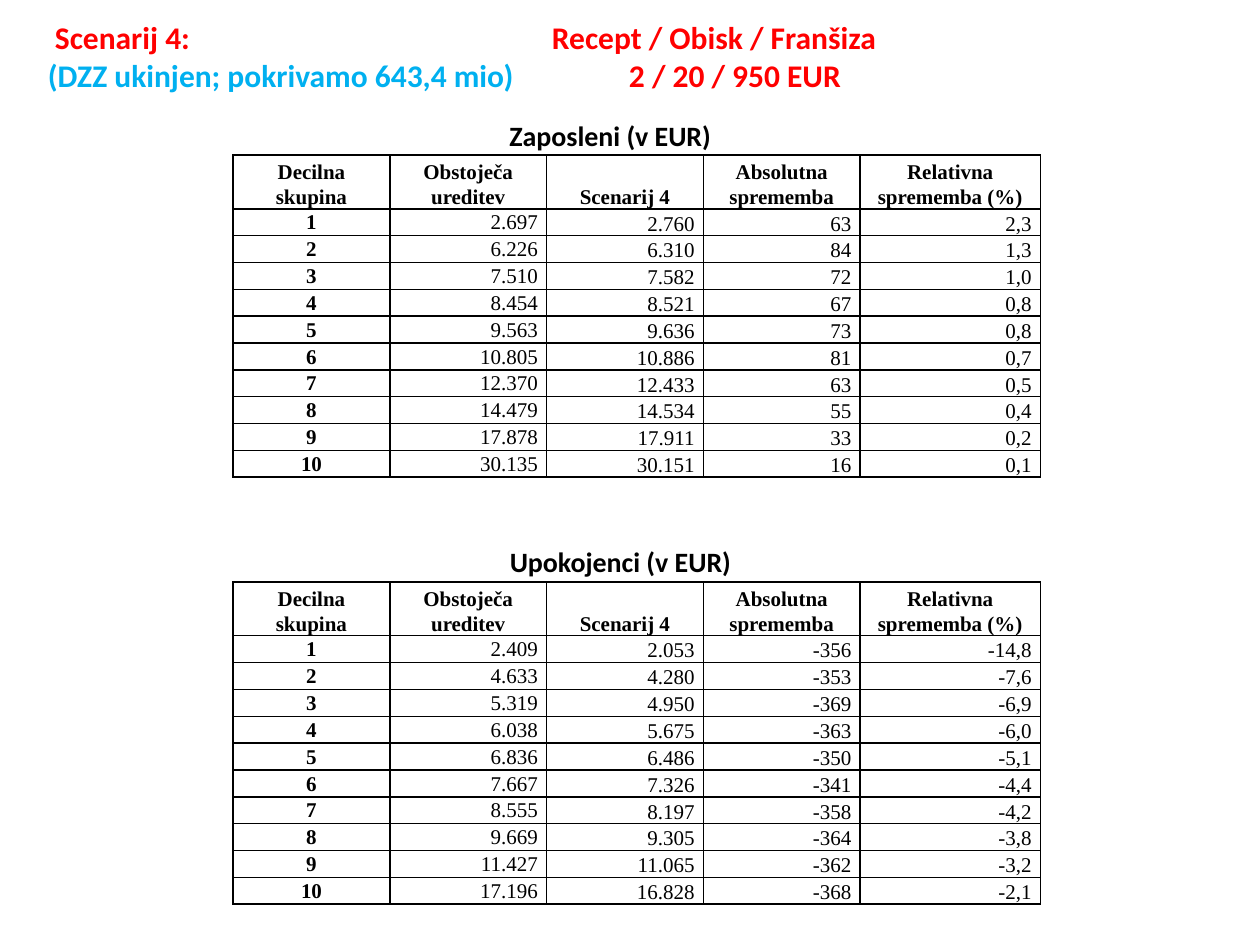
from pptx import Presentation
from pptx.dml.color import RGBColor
from pptx.enum.text import MSO_ANCHOR, MSO_AUTO_SIZE, PP_ALIGN
from pptx.oxml.ns import qn
from pptx.util import Pt
from lxml.etree import SubElement

BLACK, RED, BLUE = "000000", "FF0000", "00B0F0"
HEAD = {"name": "Calibri", "size": Pt(18), "bold": True}
LABEL = {"name": "Calibri", "size": Pt(16), "bold": True}
BOLD = {"name": "Times New Roman", "size": Pt(12), "bold": True}
PLAIN = {**BOLD, "bold": False}
INSET = {"margin_left": Pt(5), "margin_right": Pt(5),
         "margin_top": Pt(0), "margin_bottom": Pt(0)}
WIDTHS = [89.6] * 4 + [103]
LINE = 15.36

TITLE = [
    (0, 4, [("Scenarij 4:", RED),
            ("\t\t\t\t\t\tRecept / Obisk / Franšiza", RED)]),
    (8, -8, [("(DZZ ukinjen; pokrivamo 643,4 mio)", BLUE),
             ("\t\t2 / 20 / 950 EUR", RED)]),
]
HEADS = ["Decilna skupina", "Obstoječa ureditev", "Scenarij 4",
         "Absolutna sprememba", "Relativna sprememba (%)"]
WORKERS = [
    ("2.697", "2.760", "63", "2,3"),
    ("6.226", "6.310", "84", "1,3"),
    ("7.510", "7.582", "72", "1,0"),
    ("8.454", "8.521", "67", "0,8"),
    ("9.563", "9.636", "73", "0,8"),
    ("10.805", "10.886", "81", "0,7"),
    ("12.370", "12.433", "63", "0,5"),
    ("14.479", "14.534", "55", "0,4"),
    ("17.878", "17.911", "33", "0,2"),
    ("30.135", "30.151", "16", "0,1"),
]
RETIRED = [
    ("2.409", "2.053", "-356", "-14,8"),
    ("4.633", "4.280", "-353", "-7,6"),
    ("5.319", "4.950", "-369", "-6,9"),
    ("6.038", "5.675", "-363", "-6,0"),
    ("6.836", "6.486", "-350", "-5,1"),
    ("7.667", "7.326", "-341", "-4,4"),
    ("8.555", "8.197", "-358", "-4,2"),
    ("9.669", "9.305", "-364", "-3,8"),
    ("11.427", "11.065", "-362", "-3,2"),
    ("17.196", "16.828", "-368", "-2,1"),
]


def paint(color, code):
    color.rgb = RGBColor.from_string(code)


def apply(item, form):
    for key, value in form.items():
        setattr(item, key, value)


def add_run(para, text, form, code=BLACK):
    run = para.add_run()
    run.text = text
    apply(run.font, form)
    paint(run.font.color, code)


def set_indent(para, left, first):
    props = para._p.get_or_add_pPr()
    props.set("marL", str(Pt(left)))
    props.set("indent", str(Pt(first)))


def add_title(slide):
    title = slide.shapes.title
    apply(title, {"left": Pt(20.2), "top": Pt(9.4),
                  "width": Pt(595.4), "height": Pt(45.4)})
    frame = title.text_frame
    apply(frame, {"word_wrap": True, "auto_size": MSO_AUTO_SIZE.NONE,
                  "vertical_anchor": MSO_ANCHOR.MIDDLE})
    for row, (left, first, parts) in enumerate(TITLE):
        para = frame.add_paragraph() if row else frame.paragraphs[0]
        apply(para, {"alignment": PP_ALIGN.LEFT, "space_before": Pt(0)})
        set_indent(para, left, first)
        for text, code in parts:
            add_run(para, text, HEAD, code)


def add_label(slide, text, left, top):
    box = slide.shapes.add_textbox(Pt(left), Pt(top), Pt(317.5), Pt(22.3))
    frame = box.text_frame
    apply(frame, {"word_wrap": True, "vertical_anchor": MSO_ANCHOR.MIDDLE})
    para = frame.paragraphs[0]
    para.alignment = PP_ALIGN.CENTER
    add_run(para, text, LABEL)


def add_border(cell):
    props = cell._tc.get_or_add_tcPr()
    for side in ("lnL", "lnR", "lnT", "lnB"):
        line = SubElement(props, qn("a:" + side), w=str(Pt(1)))
        fill = SubElement(line, qn("a:solidFill"))
        SubElement(fill, qn("a:srgbClr"), val=BLACK)


def fill_cell(cell, text, form, align, anchor):
    apply(cell, {**INSET, "vertical_anchor": anchor})
    add_border(cell)
    cell.fill.background()
    para = cell.text_frame.paragraphs[0]
    apply(para, {"alignment": align, "line_spacing": 1.06})
    add_run(para, text, form)


def add_grid(slide, data, top):
    rows = [HEADS] + [(str(num), *vals) for num, vals in enumerate(data, 1)]
    high = LINE * (len(rows) + 1)
    table = slide.shapes.add_table(len(rows), len(HEADS), Pt(133.2), Pt(top),
                                   Pt(sum(WIDTHS)), Pt(high)).table
    apply(table, {"first_row": False, "horz_banding": False})
    for col, width in zip(table.columns, WIDTHS):
        col.width = Pt(width)
    for r, row in enumerate(rows):
        table.rows[r].height = Pt(LINE if r else 2 * LINE)
        for c, text in enumerate(row):
            key = r == 0 or c == 0
            fill_cell(table.cell(r, c), text, BOLD if key else PLAIN,
                      PP_ALIGN.CENTER if key else PP_ALIGN.RIGHT,
                      MSO_ANCHOR.MIDDLE if r and c < 2 else MSO_ANCHOR.BOTTOM)


def main():
    deck = Presentation()
    apply(deck, {"slide_width": Pt(720), "slide_height": Pt(540)})
    slide = deck.slides.add_slide(deck.slide_layouts[5])
    add_title(slide)
    add_label(slide, "Zaposleni (v EUR)", 190, 66.2)
    add_label(slide, "Upokojenci (v EUR)", 195.8, 309.6)
    add_grid(slide, WORKERS, 88.6)
    add_grid(slide, RETIRED, 332.6)
    deck.save("out.pptx")


if __name__ == "__main__":
    main()
